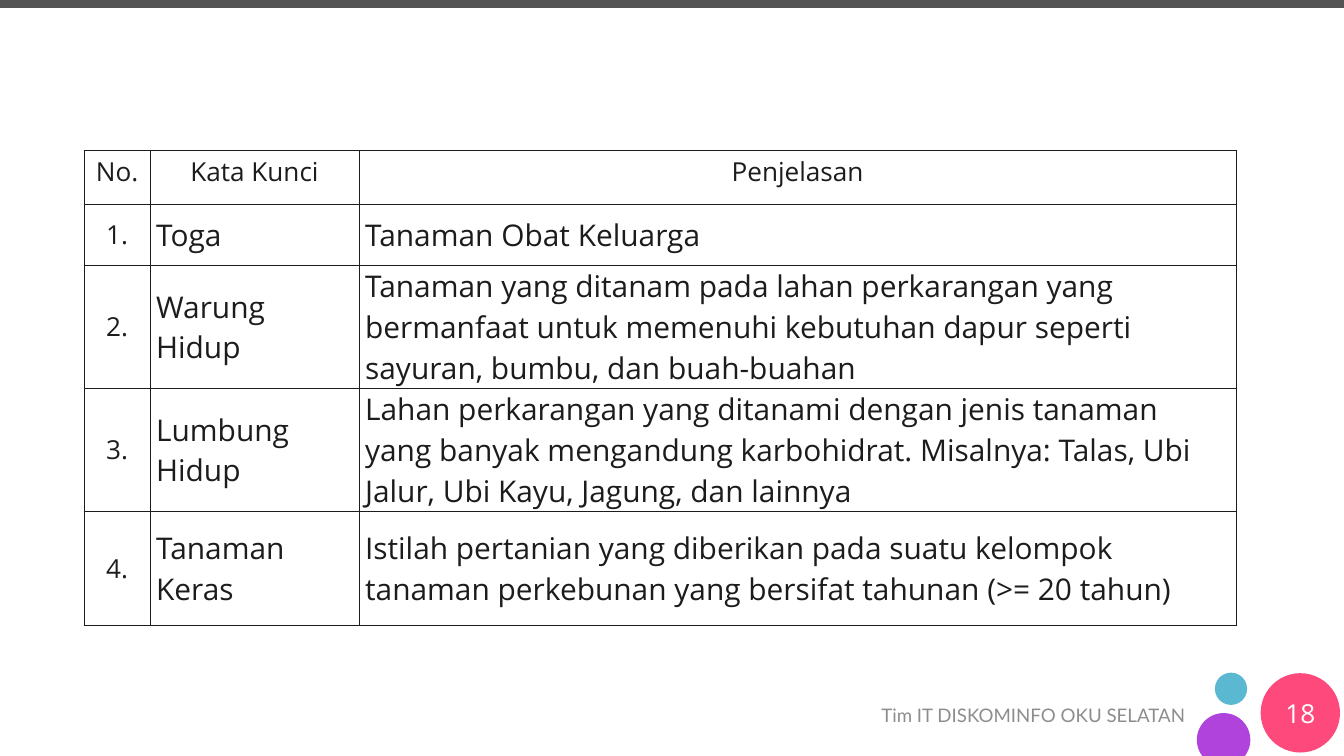
"""Builds the glossary slide of garden terms with its footer and corner circles."""
from dataclasses import dataclass
from math import asin, cos, pi, sin

from lxml.etree import SubElement
from pptx import Presentation
from pptx.dml.color import RGBColor
from pptx.enum.shapes import MSO_SHAPE
from pptx.enum.text import MSO_ANCHOR, PP_ALIGN
from pptx.oxml.ns import qn
from pptx.util import Cm, Pt


@dataclass(frozen=True)
class Theme:
    ink: str = "1C1C1C"
    bar: str = "545454"
    muted: str = "8D8D8D"
    white: str = "FFFFFF"
    teal: str = "5BB8D1"
    pink: str = "FD497C"
    purple: str = "B143DD"
    footer_size: int = 20
    label_size: int = 28
    term_size: int = 32
    border_width: int = 1
    font: str = "Open Sans"
    footer_font: str = "Lato"


theme = Theme()


def write(frame, text, align, size, color, font):
    frame.text = text
    paragraph = frame.paragraphs[0]
    paragraph.alignment = align
    run_font = paragraph.runs[0].font
    for name, value in {"size": Pt(size), "name": font}.items():
        setattr(run_font, name, value)
    run_font.color.rgb = RGBColor.from_string(color)


def paint(shape, color):
    shape.shadow.inherit = False
    shape.fill.solid()
    shape.fill.fore_color.rgb = RGBColor.from_string(color)
    shape.line.fill.background()


presentation = Presentation()
presentation.slide_width, presentation.slide_height = Cm(50.8), Cm(28.58)
slide = presentation.slides.add_slide(presentation.slide_layouts[6])

for kind, left, top, width, height, color in (
    (MSO_SHAPE.OVAL, 45.92, 25.43, 1.22, 1.22, theme.teal),
    (MSO_SHAPE.OVAL, 47.65, 25.45, 3, 3, theme.pink),
    (MSO_SHAPE.RECTANGLE, 0, 0, 50.8, 0.3, theme.bar),
):
    paint(slide.shapes.add_shape(kind, Cm(left), Cm(top), Cm(width), Cm(height)), color)

center_x, center_y, radius, slide_bottom = 46.25, 27.97, 1.01, 28.58
cut_angle = asin((slide_bottom - center_y) / radius)
start_angle, sweep, steps = pi - cut_angle, pi + 2 * cut_angle, 60
arc = [
    (Cm(center_x + radius * cos(angle)), Cm(center_y + radius * sin(angle)))
    for angle in (start_angle + sweep * step / steps for step in range(steps + 1))
]
cut_circle = slide.shapes.build_freeform(*arc[0])
cut_circle.add_line_segments(arc[1:], close=True)
paint(cut_circle.convert_to_shape(), theme.purple)

caption_format = {
    "word_wrap": True,
    "vertical_anchor": MSO_ANCHOR.MIDDLE,
    "margin_left": Cm(0.46),
    "margin_right": Cm(0.46),
    "margin_top": Cm(0.23),
    "margin_bottom": Cm(0.23),
}
for text, left, top, width, align, size, color, font in (
    ("Tim IT DISKOMINFO OKU SELATAN", 29.18, 26.29, 16.08, PP_ALIGN.RIGHT,
     theme.footer_size, theme.muted, theme.footer_font),
    ("18", 47.65, 26.21, 3, PP_ALIGN.CENTER, theme.label_size, theme.white, theme.font),
):
    caption = slide.shapes.add_textbox(Cm(left), Cm(top), Cm(width), Cm(1.52)).text_frame
    for name, value in caption_format.items():
        setattr(caption, name, value)
    write(caption, text, align, size, color, font)

glossary = (
    ("No.", "Kata Kunci", "Penjelasan"),
    ("1.", "Toga", "Tanaman Obat Keluarga"),
    ("2.", "Warung Hidup",
     "Tanaman yang ditanam pada lahan perkarangan yang bermanfaat untuk memenuhi "
     "kebutuhan dapur seperti sayuran, bumbu, dan buah-buahan"),
    ("3.", "Lumbung Hidup",
     "Lahan perkarangan yang ditanami dengan jenis tanaman yang banyak mengandung "
     "karbohidrat. Misalnya: Talas, Ubi Jalur, Ubi Kayu, Jagung, dan lainnya"),
    ("4.", "Tanaman Keras",
     "Istilah pertanian yang diberikan pada suatu kelompok tanaman perkebunan yang "
     "bersifat tahunan (>= 20 tahun)"),
)
column_widths = (2.49, 7.9, 33.15)
row_heights = (2.03, 2.31, 4.65, 4.65, 4.32)
table = slide.shapes.add_table(
    len(row_heights), len(column_widths), Cm(3.18), Cm(5.69),
    Cm(sum(column_widths)), Cm(sum(row_heights)),
).table
for name, value in {"first_row": False, "horz_banding": False}.items():
    setattr(table, name, value)
for column, width in zip(table.columns, column_widths):
    column.width = Cm(width)
for row, height in zip(table.rows, row_heights):
    row.height = Cm(height)

for row_index, entry in enumerate(glossary):
    is_header = row_index == 0
    cell_format = {
        "vertical_anchor": MSO_ANCHOR.TOP if is_header else MSO_ANCHOR.MIDDLE,
        "margin_left": Cm(0.23),
        "margin_right": Cm(0.23),
        "margin_top": Cm(0.13 if is_header else 0),
        "margin_bottom": Cm(0),
    }
    for column_index, text in enumerate(entry):
        cell = table.cell(row_index, column_index)
        for name, value in cell_format.items():
            setattr(cell, name, value)
        is_label = is_header or column_index == 0
        write(
            cell.text_frame, text,
            PP_ALIGN.CENTER if is_label else PP_ALIGN.LEFT,
            theme.label_size if is_label else theme.term_size,
            theme.ink, theme.font,
        )
        properties = cell._tc.get_or_add_tcPr()
        for side in ("a:lnL", "a:lnR", "a:lnT", "a:lnB"):
            border = SubElement(properties, qn(side), w=str(Pt(theme.border_width)))
            border_fill = SubElement(border, qn("a:solidFill"))
            SubElement(border_fill, qn("a:srgbClr"), val=theme.ink)
        cell.fill.background()

presentation.save("out.pptx")
